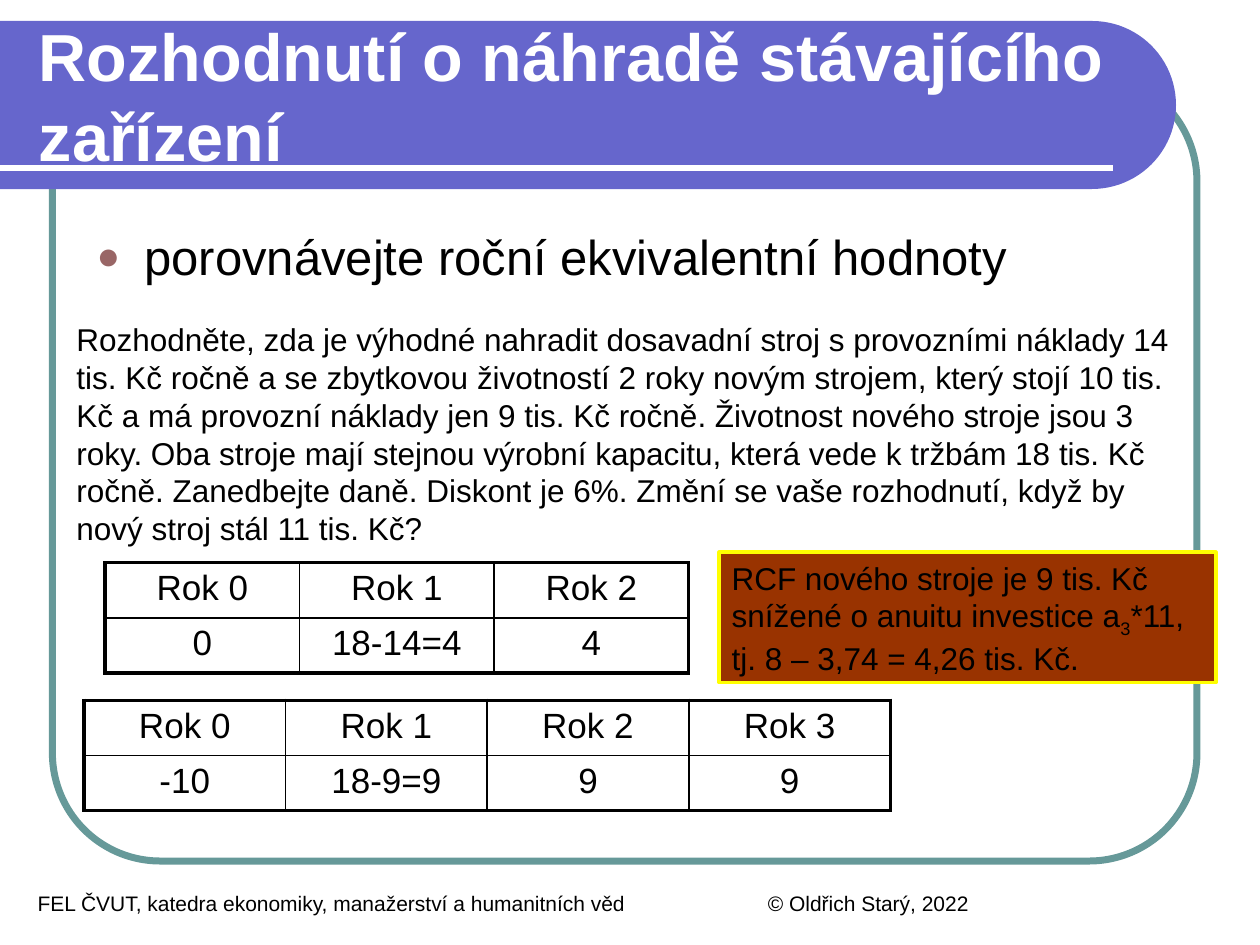
from math import cos, pi, sin

from lxml import etree
from pptx import Presentation, util as u
from pptx.dml.color import RGBColor
from pptx.enum import shapes, text
from pptx.oxml.ns import qn

# Content
TITLE = "Rozhodnutí o náhradě stávajícího zařízení"
BULLET = "porovnávejte roční ekvivalentní hodnoty"
QUESTION = (
    "Rozhodněte, zda je výhodné nahradit dosavadní stroj s provozními náklady 14 tis. Kč "
    "ročně a se zbytkovou životností 2 roky novým strojem, který stojí 10 tis. Kč a má "
    "provozní náklady jen 9 tis. Kč ročně. Životnost nového stroje jsou 3 roky. Oba stroje "
    "mají stejnou výrobní kapacitu, která vede k tržbám 18 tis. Kč ročně. Zanedbejte daně. "
    "Diskont je 6%. Změní se vaše rozhodnutí, když by nový stroj stál 11 tis. Kč?"
)
# Odd parts of the note are subscripts
NOTE = ("RCF nového stroje je 9 tis. Kč snížené o anuitu investice a", "3",
        "*11, tj. 8 – 3,74 = 4,26 tis. Kč.")
OLD_MACHINE = ["0", "18-14=4", "4"]
NEW_MACHINE = ["-10", "18-9=9", "9", "9"]
DEPARTMENT = "FEL ČVUT, katedra ekonomiky, manažerství a humanitních věd"
AUTHOR = "© Oldřich Starý, 2022"

THEME = {
    "font": "Arial", "ink": "000000", "paper": "FFFFFF", "bar": "6666CC",
    "frame": "669999", "bullet": "996666", "note": "993300", "note_line": "FFFF00",
    "title": 38, "body": 28, "cell": 20, "text": 18, "footer": 12,
}

# Slide grid: 120 columns by 90 rows
COLUMNS, ROWS = 120, 90
deck = Presentation()
deck.slide_width, deck.slide_height = u.Inches(10), u.Inches(7.5)
page = deck.slides.add_slide(deck.slide_layouts[1])


def grid(left, top, width, height):
    across, down = deck.slide_width / COLUMNS, deck.slide_height / ROWS
    return [u.Emu(round(n)) for n in (left * across, top * down, width * across, height * down)]


def color(name):
    return RGBColor.from_string(THEME[name])


def write(frame, *parts, size="text", ink="ink", bold=False,
          align=text.PP_ALIGN.LEFT, anchor=text.MSO_ANCHOR.TOP):
    frame.word_wrap = True
    frame.auto_size = text.MSO_AUTO_SIZE.NONE
    frame.vertical_anchor = anchor
    para = frame.paragraphs[0]
    para.alignment = align
    for index, part in enumerate(parts):
        span = para.add_run()
        span.text = part
        font = span.font
        font.name, font.size, font.bold = THEME["font"], u.Pt(THEME[size]), bold
        font.color.rgb = color(ink)
        if index % 2:
            font._element.set("baseline", "-25000")
    return para


def place(box, *cells):
    box.left, box.top, box.width, box.height = grid(*cells)
    box.element.getparent().append(box.element)  # bring to front
    return box.text_frame


def add_text(cells, words, **style):
    return write(page.shapes.add_textbox(*grid(*cells)).text_frame, words, **style)


def outline(shape, name, points):
    shape.shadow.inherit = False
    shape.line.color.rgb = color(name)
    shape.line.width = u.Pt(points)


def fill(shape, name):
    shape.fill.solid()
    shape.fill.fore_color.rgb = color(name)


def set_border(cell, side, points):
    edge = etree.SubElement(cell._tc.get_or_add_tcPr(), qn("a:ln" + side), w=str(u.Pt(points)))
    solid = etree.SubElement(edge, qn("a:solidFill"))
    etree.SubElement(solid, qn("a:srgbClr"), val=THEME["ink"])


def add_cash_flow(cells, values):
    rows = [[f"Rok {year}" for year in range(len(values))], values]
    table = page.shapes.add_table(2, len(values), *grid(*cells)).table
    table.first_row = table.horz_banding = False
    for r, row in enumerate(rows):
        for c, words in enumerate(row):
            cell = table.cell(r, c)
            write(cell.text_frame, words, size="cell", align=text.PP_ALIGN.CENTER)
            outer = {"L": c == 0, "R": c == len(row) - 1, "T": r == 0, "B": r == 1}
            for side, is_outer in outer.items():
                set_border(cell, side, 2.25 if is_outer else 1)
            cell.fill.background()


# Rounded frame
frame = page.shapes.add_shape(shapes.MSO_SHAPE.ROUNDED_RECTANGLE, *grid(5, 7, 109, 75))
frame.adjustments[0] = 0.137
frame.fill.background()
outline(frame, "frame", 4)

# Title bar with a round right end
BAR_TOP, BAR_RIGHT, RADIUS, STEPS = 2, 112, 8, 48
angles = [pi * (step / STEPS - 0.5) for step in range(STEPS + 1)]
arc = [(BAR_RIGHT - RADIUS + RADIUS * cos(a), BAR_TOP + RADIUS + RADIUS * sin(a)) for a in angles]
builder = page.shapes.build_freeform(0, BAR_TOP * 1000, scale=deck.slide_width / COLUMNS / 1000)
builder.add_line_segments([(x * 1000, y * 1000) for x, y in arc] + [(0, (BAR_TOP + 2 * RADIUS) * 1000)])
bar = builder.convert_to_shape()
fill(bar, "bar")
bar.line.fill.background()
bar.shadow.inherit = False

# Rule under the title
left, top, width, _ = grid(0, 16, 106, 0)
rule = page.shapes.add_connector(shapes.MSO_CONNECTOR.STRAIGHT, left, top, width, top)
rule.line.color.rgb = color("paper")
rule.line.width = u.Pt(3)
etree.SubElement(rule.element.spPr, qn("a:effectLst"))

# Footer
add_text((2.4, 81.8, 59.5, 6), DEPARTMENT, size="footer", anchor=text.MSO_ANCHOR.BOTTOM)
add_text((63.7, 81.8, 38, 6), AUTHOR, size="footer", align=text.PP_ALIGN.CENTER,
         anchor=text.MSO_ANCHOR.BOTTOM)

# Title and bullet
write(place(page.shapes.title, 2.5, 3, 105.2, 12), TITLE, size="title", ink="paper",
      bold=True, anchor=text.MSO_ANCHOR.MIDDLE)
para = write(place(page.placeholders[1], 8, 21, 100.2, 6.8), BULLET, size="body")
props = para._p.get_or_add_pPr()
props.set("marL", str(u.Inches(0.38)))
props.set("indent", str(u.Inches(-0.38)))
bullet_color = etree.SubElement(props, qn("a:buClr"))
etree.SubElement(bullet_color, qn("a:srgbClr"), val=THEME["bullet"])
etree.SubElement(props, qn("a:buSzPct"), val="80000")
etree.SubElement(props, qn("a:buChar"), char="●")

# Question and cash flows
add_text((6.1, 29.9, 107.8, 22.8), QUESTION)
add_cash_flow((10, 53.6, 55.6, 10.5), OLD_MACHINE)
add_cash_flow((8, 66.7, 76.8, 10.5), NEW_MACHINE)

# Answer note
note = page.shapes.add_shape(shapes.MSO_SHAPE.RECTANGLE, *grid(68.5, 52.6, 47.3, 12.4))
fill(note, "note")
outline(note, "note_line", 2.25)
write(note.text_frame, *NOTE)

deck.save("out.pptx")
